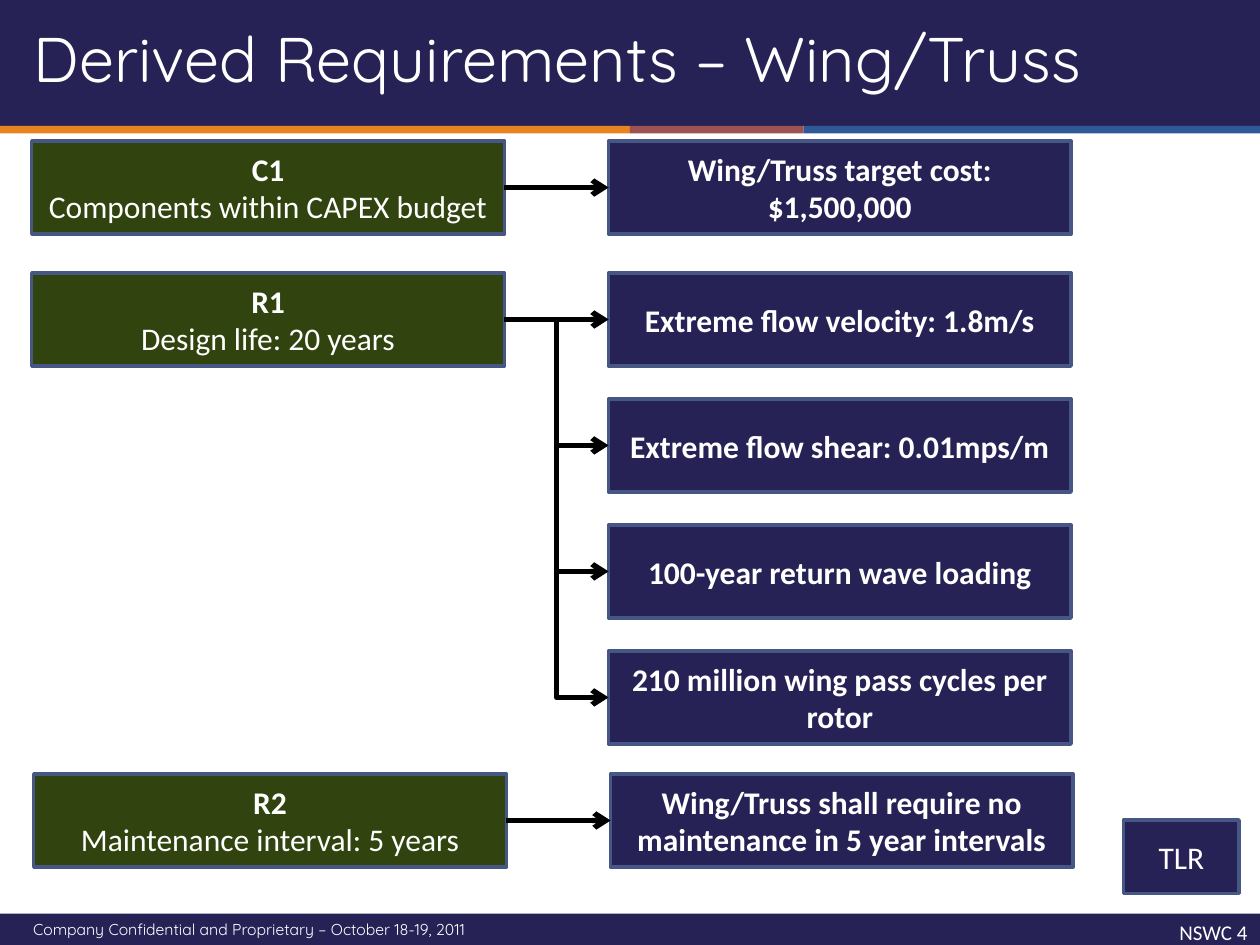
"""Builds the wing and truss derived requirements slide."""
from lxml import etree
from pptx import Presentation
from pptx.dml.color import RGBColor
from pptx.enum.shapes import MSO_CONNECTOR, MSO_SHAPE
from pptx.enum.text import MSO_ANCHOR, MSO_AUTO_SIZE, PP_ALIGN
from pptx.oxml.ns import qn
from pptx.util import Cm, Pt

RECTANGLE, PROCESS = MSO_SHAPE.RECTANGLE, MSO_SHAPE.FLOWCHART_PROCESS
STRAIGHT, ELBOW = MSO_CONNECTOR.STRAIGHT, MSO_CONNECTOR.ELBOW
LEFT, CENTER, RIGHT = PP_ALIGN.LEFT, PP_ALIGN.CENTER, PP_ALIGN.RIGHT
MIDDLE, TOP = MSO_ANCHOR.MIDDLE, MSO_ANCHOR.TOP
NO_AUTOFIT = MSO_AUTO_SIZE.NONE

NAVY = RGBColor(0x27, 0x22, 0x55)
GREEN = RGBColor(0x31, 0x44, 0x10)
ORANGE = RGBColor(0xE6, 0x84, 0x22)
RED = RGBColor(0x9C, 0x52, 0x52)
BLUE = RGBColor(0x2F, 0x58, 0x97)
OUTLINE = RGBColor(0x47, 0x57, 0x85)
WHITE = RGBColor(0xFF, 0xFF, 0xFF)
BLACK = RGBColor(0x00, 0x00, 0x00)

HEADING_FONT, BODY_FONT = "Quicksand", "Calibri"
BOX_HEIGHT = 1.88
SOURCE_LEFT, SOURCE_WIDTH = 0.64, 9.53
DERIVED_LEFT, DERIVED_WIDTH = 12.27, 9.32
ROW_STEP = 2.54

REQUIREMENTS = [
    (2.84, 0, "C1", "Components within CAPEX budget",
     ["Wing/Truss target cost: $1,500,000"]),
    (5.5, 0, "R1", "Design life: 20 years",
     ["Extreme flow velocity: 1.8m/s", "Extreme flow shear: 0.01mps/m",
      "100-year return wave loading", "210 million wing pass cycles per rotor"]),
    (15.6, 0.04, "R2", "Maintenance interval: 5 years",
     ["Wing/Truss shall require no maintenance in 5 year intervals"]),
]


class SlideBuilder:
    """Holds the style and the current slide."""

    def __init__(self, slide):
        self.slide = slide
        self.shapes = slide.shapes

    def set_text(self, shape, text, size, font, align, anchor, bold=False):
        """Set the text of a shape and format its runs."""
        frame = shape.text_frame
        frame.text = text
        frame.word_wrap = True
        frame.auto_size = NO_AUTOFIT
        frame.vertical_anchor = anchor
        for paragraph in frame.paragraphs:
            paragraph.alignment = align
            for run in paragraph.runs:
                run.font.name = font
                run.font.size = Pt(size)
                run.font.bold = bold
                run.font.color.rgb = WHITE

    def title(self, text, left, top, width, height):
        """Place the title above the bars drawn so far."""
        title = self.shapes.title
        title.left, title.top = Cm(left), Cm(top)
        title.width, title.height = Cm(width), Cm(height)
        self.set_text(title, text, 36, HEADING_FONT, LEFT, MIDDLE)
        title.element.getparent().append(title.element)

    def bar(self, left, top, width, height, color, kind=RECTANGLE):
        """Add a filled shape without outline."""
        shape = self.shapes.add_shape(kind, Cm(left), Cm(top), Cm(width), Cm(height))
        shape.shadow.inherit = False
        shape.fill.solid()
        shape.fill.fore_color.rgb = color
        shape.line.fill.background()
        return shape

    def box(self, text, left, top, width, height, color, kind=PROCESS, bold=True):
        """Add an outlined box with centred text."""
        shape = self.bar(left, top, width, height, color, kind)
        shape.line.color.rgb = OUTLINE
        shape.line.width = Pt(2)
        self.set_text(shape, text, 18, BODY_FONT, CENTER, MIDDLE, bold)
        return shape

    def source_box(self, code, text, left, top):
        """Add a top-level requirement with a bold code above its text."""
        shape = self.box(f"{code}\n{text}", left, top, SOURCE_WIDTH, BOX_HEIGHT, GREEN)
        shape.text_frame.paragraphs[1].runs[0].font.bold = False
        return shape

    def arrow(self, source, target, kind):
        """Join the right side of one box to the left side of another."""
        connector = self.shapes.add_connector(kind, 0, 0, 0, 0)
        connector.begin_connect(source, 3)
        connector.end_connect(target, 1)
        connector.line.color.rgb = BLACK
        connector.line.width = Pt(3)
        properties = connector.element.spPr
        etree.SubElement(properties.find(qn("a:ln")), qn("a:tailEnd"), type="arrow")
        etree.SubElement(properties, qn("a:effectLst"))

    def label(self, text, left, top, width, height, size, font, align):
        """Add a plain text box."""
        shape = self.shapes.add_textbox(Cm(left), Cm(top), Cm(width), Cm(height))
        self.set_text(shape, text, size, font, align, TOP)


def main():
    """Build and save the slide."""
    presentation = Presentation()
    presentation.slide_width, presentation.slide_height = Cm(25.4), Cm(19.05)
    builder = SlideBuilder(presentation.slides.add_slide(presentation.slide_layouts[5]))

    builder.bar(0, 18.42, 25.4, 0.63, NAVY)
    builder.bar(0, 0, 25.4, 2.54, NAVY)
    stripe_left = 0
    for width, color in ((12.7, ORANGE), (3.5, RED), (9.2, BLUE)):
        builder.bar(stripe_left, 2.54, width, 0.15, color)
        stripe_left += width
    builder.label("Company Confidential and Proprietary – October 18-19, 2011",
                  0.42, 18.42, 11.23, 0.63, 9, HEADING_FONT, LEFT)
    builder.title("Derived Requirements – Wing/Truss", 0.42, 0.1, 23.5, 2.12)

    for top, shift, code, text, derived in REQUIREMENTS:
        source = builder.source_box(code, text, SOURCE_LEFT + shift, top)
        for row, derived_text in enumerate(derived):
            target = builder.box(derived_text, DERIVED_LEFT + shift, top + row * ROW_STEP,
                                 DERIVED_WIDTH, BOX_HEIGHT, NAVY)
            builder.arrow(source, target, ELBOW if row else STRAIGHT)

    builder.box("TLR", 22.65, 16.53, 2.33, 1.48, NAVY, RECTANGLE, False)
    builder.label("NSWC 4", 19.48, 18.42, 5.92, 1.06, 12, BODY_FONT, RIGHT)
    presentation.save("out.pptx")


if __name__ == "__main__":
    main()
